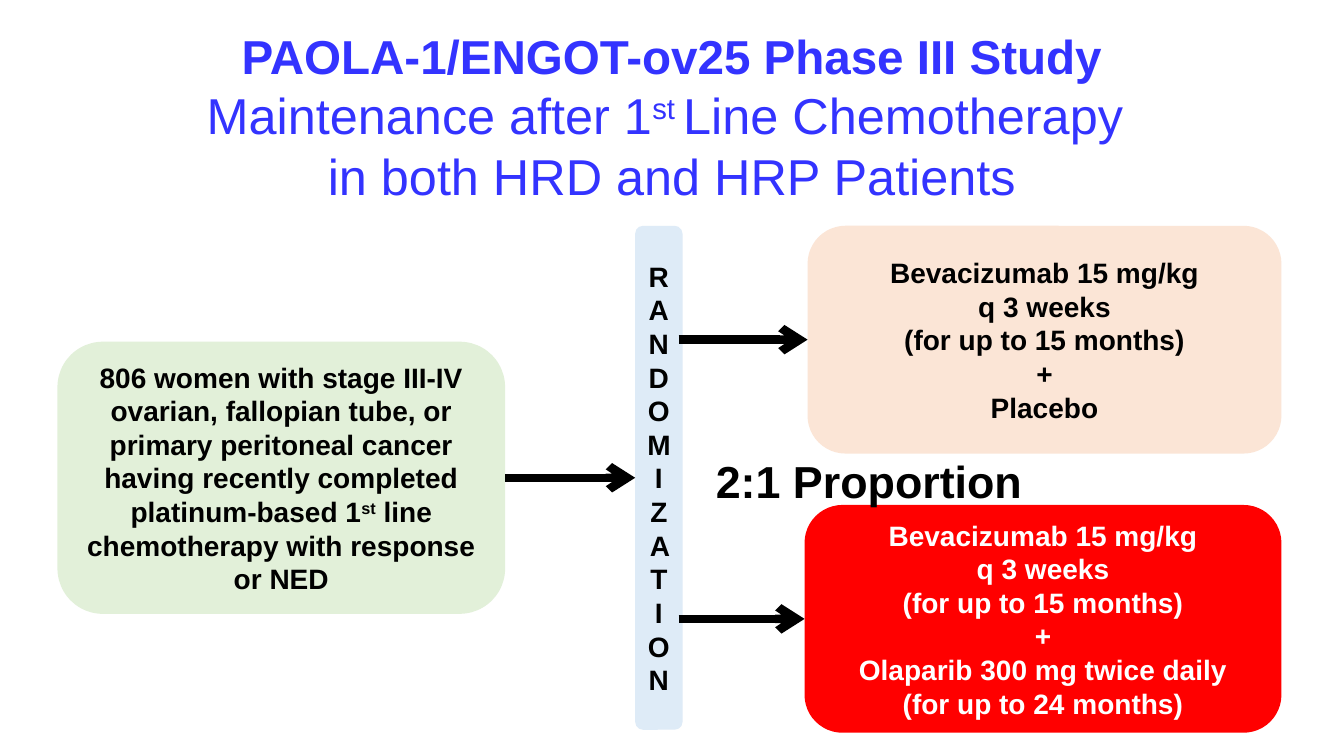
from pptx import Presentation
from pptx.dml.color import RGBColor as RGB
from pptx.enum.shapes import MSO_SHAPE as Shape, MSO_CONNECTOR as Line
from pptx.enum.text import MSO_ANCHOR as Anchor, MSO_AUTO_SIZE as Auto, PP_ALIGN as Align
from pptx.oxml.ns import qn
from pptx.util import Inches, Pt
from lxml import etree

HUES = {"title": "3333FF", "black": "000000", "white": "FFFFFF", "red": "FF0000",
        "peach": "FBE5D6", "green": "E2F0D9", "blue": "DEEBF7"}

# Content: each paragraph is a list of runs; "^" marks a superscript run
TITLE = [["PAOLA-1/ENGOT-ov25 Phase III Study"],
         ["Maintenance after 1", "^st ", "Line Chemotherapy "],
         ["in both HRD and HRP Patients"]]
RATIO = [["2:1 Proportion"]]
BEV = [["Bevacizumab 15 mg/kg"], ["q 3 weeks"], ["(for up to 15 months)"], ["+"]]
WOMEN = [["806 women with stage III-IV ovarian, fallopian tube, or primary peritoneal "
          "cancer having recently completed platinum-based 1", "^st",
          " line chemotherapy with response or NED"]]
SPLIT = [["RANDOMI"], ["ZAT"], ["I"], ["ON"]]

# name: (left, top, width, height), fill, text colour, paragraphs
BOXES = {
    "olap": ((7.98, 5.01, 4.73, 2.26), "red", "white",
             BEV + [["Olaparib 300 mg twice daily"], ["(for up to 24 months)"]]),
    "plac": ((8.01, 2.24, 4.7, 2.26), "peach", "black", BEV + [["Placebo"]]),
    "women": ((0.57, 3.39, 4.44, 2.7), "green", "black", WOMEN),
    "split": ((6.3, 2.24, 0.47, 5), "blue", "black", SPLIT),
}
# (start box, end box); arrows to the arms start just inside the strip
ARROWS = [("women", "split"), ("split", "plac"), ("split", "olap")]
INSIDE = 0.04

BODY = {"size": Pt(20), "bold": True, "name": "Arial"}
HEAD = {"size": Pt(34), "bold": True, "name": "Arial"}
SUB = {"size": Pt(36), "bold": False, "name": "Arial"}
BIG = {"size": Pt(32), "bold": True, "name": "Arial"}

prs = Presentation()
prs.slide_width, prs.slide_height = Inches(13.33), Inches(7.5)
slide = prs.slides.add_slide(prs.slide_layouts[6])
shapes = slide.shapes


def write(frame, paras, hue, styles):
    """Fill a frame; the last style serves all later paragraphs."""
    frame.word_wrap = True
    for i, runs in enumerate(paras):
        para = frame.paragraphs[0] if i == 0 else frame.add_paragraph()
        para.alignment = Align.CENTER
        for text in runs:
            run = para.add_run()
            run.text = text.lstrip("^")
            for key, val in styles[min(i, len(styles) - 1)].items():
                setattr(run.font, key, val)
            run.font.color.rgb = RGB.from_string(HUES[hue])
            if text.startswith("^"):
                run.font._element.set("baseline", "30000")


def label(place, paras, hue, styles):
    box = shapes.add_textbox(*map(Inches, place))
    write(box.text_frame, paras, hue, styles)
    box.text_frame.auto_size = Auto.SHAPE_TO_FIT_TEXT


# Rounded boxes
made = {}
for name, (place, fill, hue, paras) in BOXES.items():
    box = made[name] = shapes.add_shape(Shape.ROUNDED_RECTANGLE, *map(Inches, place))
    box.shadow.inherit = False
    box.fill.solid()
    box.fill.fore_color.rgb = RGB.from_string(HUES[fill])
    box.line.fill.background()
    box.text_frame.vertical_anchor = Anchor.MIDDLE
    write(box.text_frame, paras, hue, [BODY])

# Arrows, level with the middle of the box on their outer side
for start, end in ARROWS:
    left, top, wide, high = BOXES[start][0]
    x2, top2, _, high2 = BOXES[end][0]
    y = top2 + high2 / 2
    x1 = left + wide - (INSIDE if start == "split" else 0)
    arrow = shapes.add_connector(Line.STRAIGHT, *map(Inches, (x1, y, x2, y)))
    if start == "women":
        arrow.begin_connect(made[start], 3)
    arrow.end_connect(made[end], 1)
    arrow.line.width = Pt(6)
    arrow.line.color.rgb = RGB.from_string(HUES["black"])
    etree.SubElement(arrow.line._get_or_add_ln(), qn("a:tailEnd"), type="arrow")
    etree.SubElement(arrow._element.spPr, qn("a:effectLst"))

# Title and ratio
label((0, 0.22, 13.33, 1.88), TITLE, "title", [HEAD, SUB])
label((6.88, 4.45, 3.48, 0.64), RATIO, "black", [BIG])

prs.save("out.pptx")
